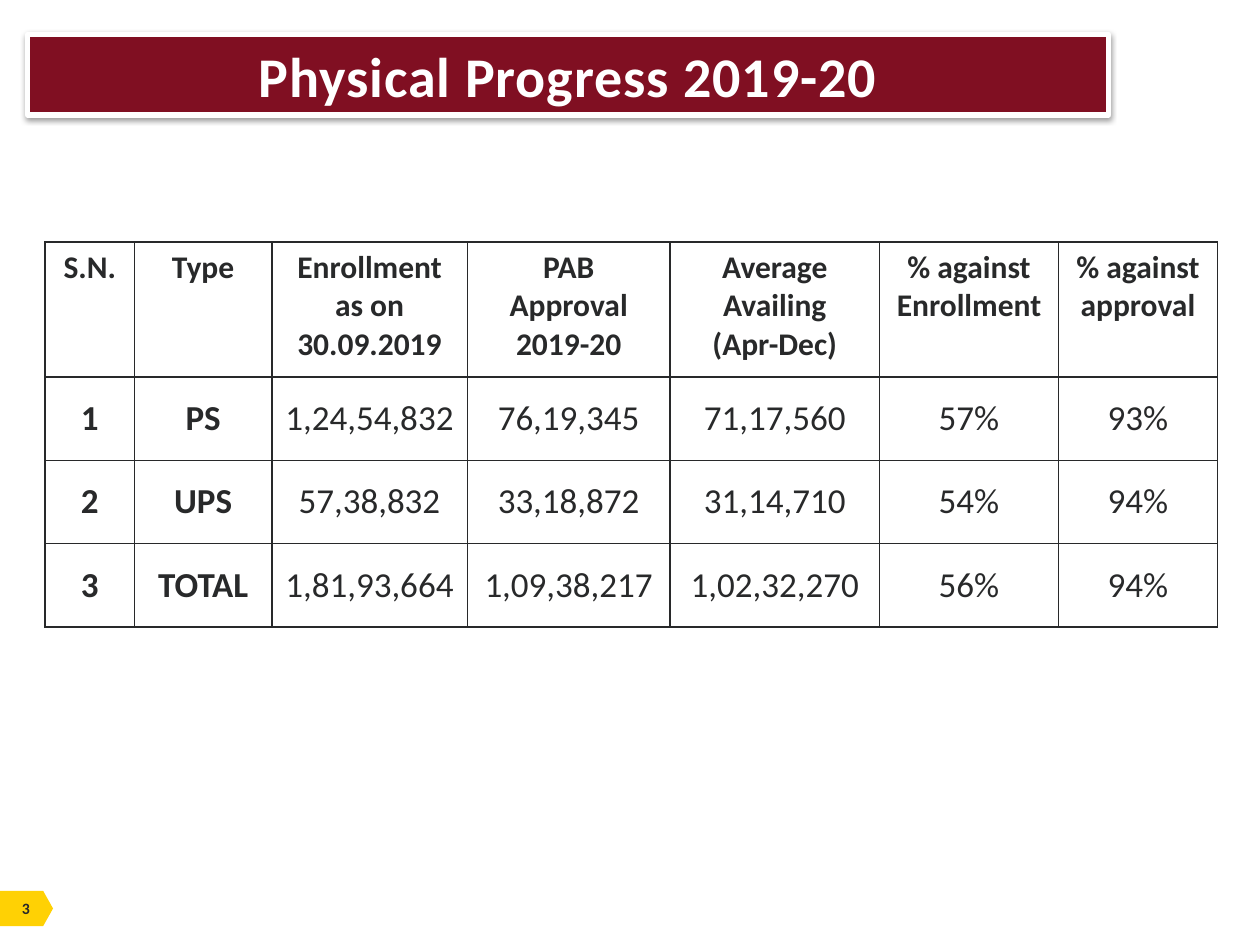
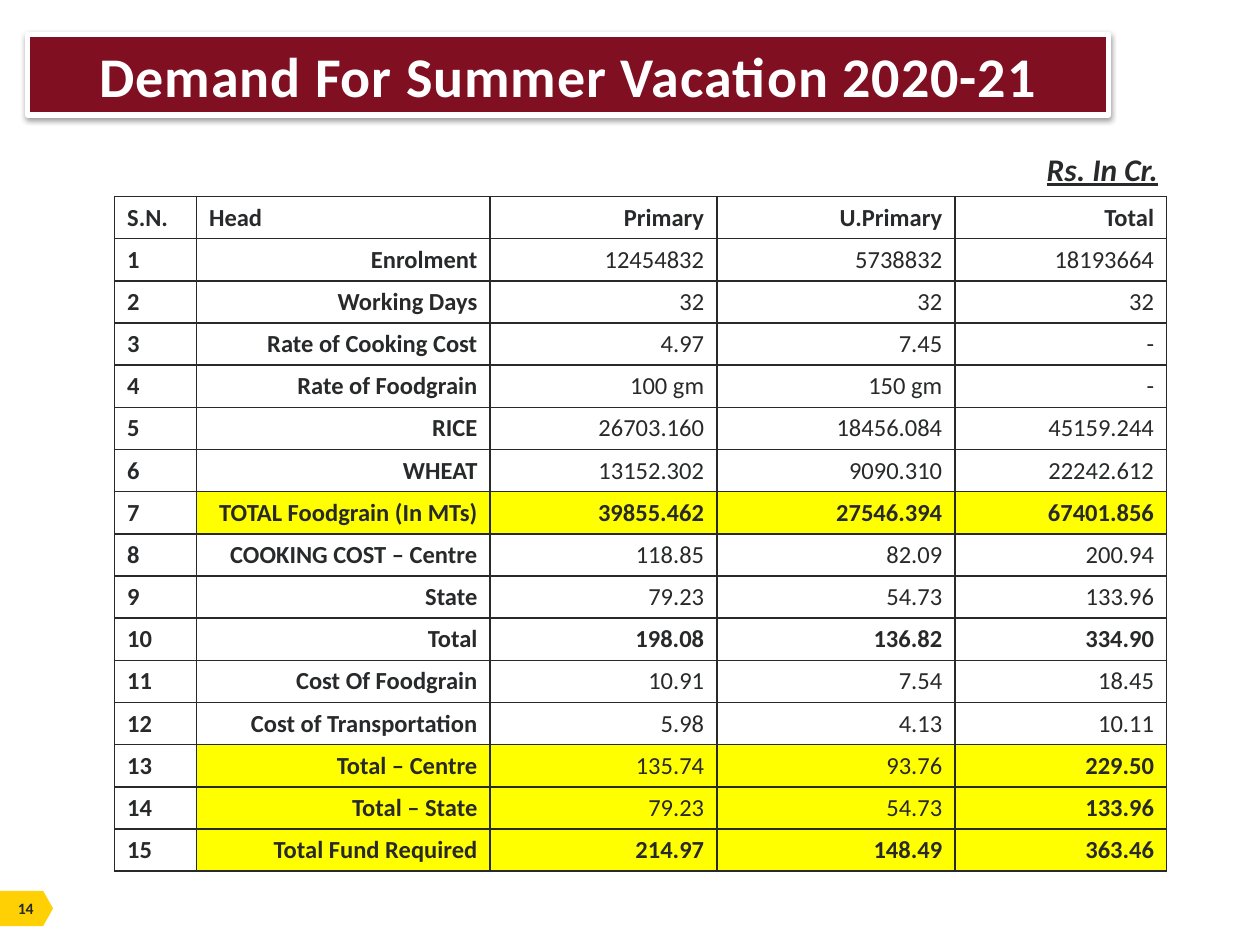
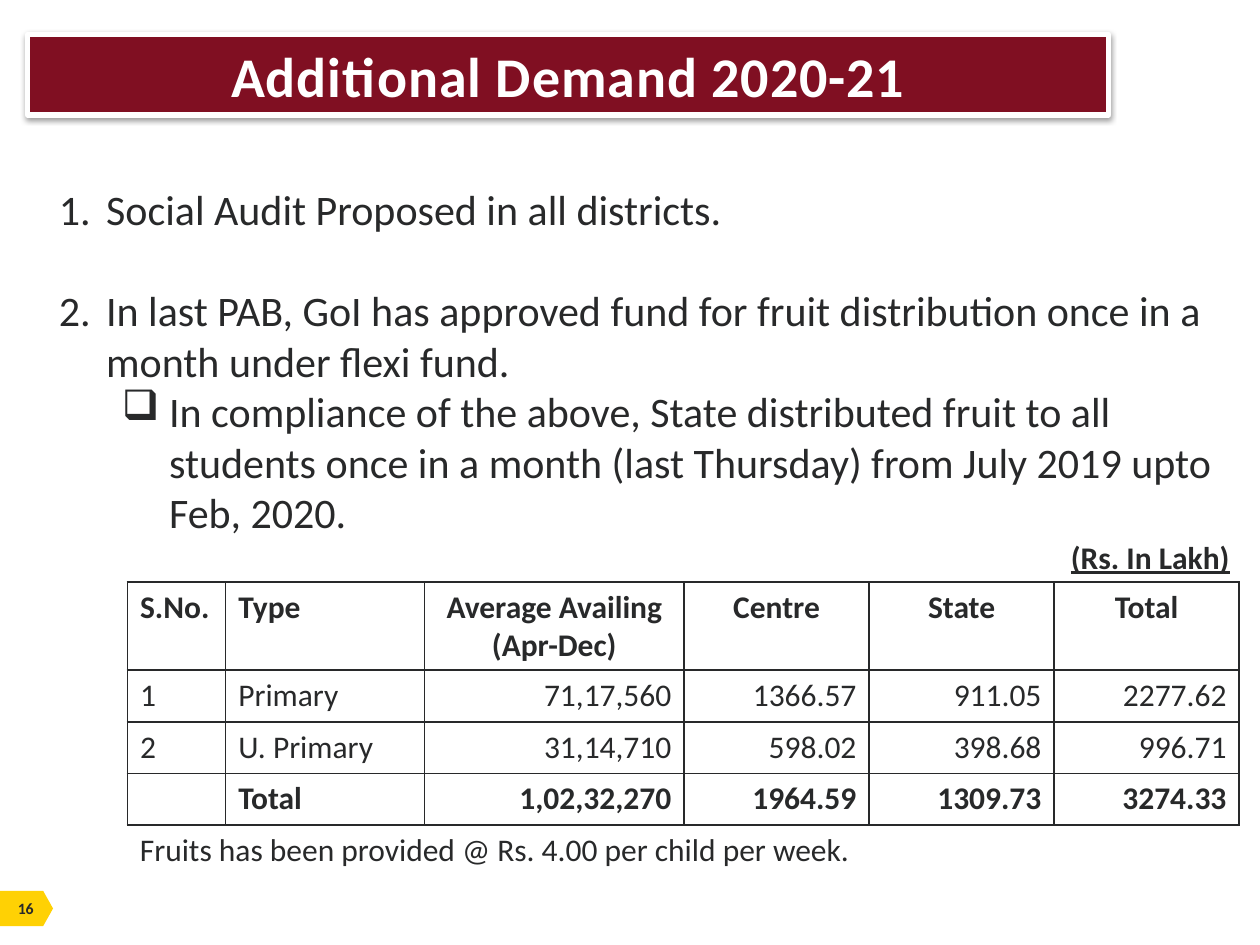
from pptx import Presentation
from pptx.dml.color import RGBColor
from pptx.enum.shapes import MSO_SHAPE
from pptx.enum.text import MSO_ANCHOR, PP_ALIGN
from pptx.oxml.ns import qn
from pptx.util import Cm, Pt
from lxml import etree

RECT, PLATE = MSO_SHAPE.RECTANGLE, MSO_SHAPE.PENTAGON
TOP, MIDDLE = MSO_ANCHOR.TOP, MSO_ANCHOR.MIDDLE
ALIGN = {"l": PP_ALIGN.LEFT, "c": PP_ALIGN.CENTER, "r": PP_ALIGN.RIGHT}
FONT = "Calibri"
HEX = {"ink": "28292A", "band": "800F22", "white": "FFFFFF",
       "tag": "FFD104", "mark": "FFFF00", "shade": "000000"}
RGB = {name: RGBColor.from_string(code) for name, code in HEX.items()}


def style(para, size, bold=False, align="l", color="ink"):
    para.alignment = ALIGN[align]
    for run in para.runs:
        font = run.font
        font.name, font.size, font.bold = FONT, Pt(size), bold
        font.color.rgb = RGB[color]


def grid(slide, left, top, cols, tall, rows, size, head, body,
         strong, marked=(), anchor=TOP):
    """Draw a ruled table; tall holds the header and body row heights,
    head and body hold one alignment letter per column."""
    high = [tall[0]] + [tall[1]] * (len(rows) - 1)
    frame = slide.shapes.add_table(len(rows), len(cols), Cm(left), Cm(top),
                                   Cm(sum(cols)), Cm(sum(high)))
    table = frame.table
    table.first_row = table.horz_banding = False
    for c, wide in enumerate(cols):
        table.columns[c].width = Cm(wide)
    for r, row in enumerate(rows):
        table.rows[r].height = Cm(high[r])
        for c, text in enumerate(row):
            cell = table.cell(r, c)
            cell.text_frame.text = text
            cell.vertical_anchor = anchor if r else TOP
            for para in cell.text_frame.paragraphs:
                style(para, size if r else min(size, 18),
                      r == 0 or strong(r, c), (body if r else head)[c])
            # Cell borders, which must come before the fill
            props = cell._tc.get_or_add_tcPr()
            for side in ("a:lnL", "a:lnR", "a:lnT", "a:lnB"):
                line = etree.SubElement(props, qn(side), w=str(Pt(1)))
                fill = etree.SubElement(line, qn("a:solidFill"))
                etree.SubElement(fill, qn("a:srgbClr"), val=HEX["ink"])
            if r in marked and c:
                cell.fill.solid()
                cell.fill.fore_color.rgb = RGB["mark"]
            else:
                cell.fill.background()


deck = Presentation()
deck.slide_width, deck.slide_height = Cm(25.4), Cm(19.05)

# Page tag and title band on every slide
pages = []
for num, title in (("3", "Physical Progress 2019-20"),
                   ("14", "Demand For Summer Vacation 2020-21"),
                   ("16", "Additional Demand 2020-21")):
    slide = deck.slides.add_slide(deck.slide_layouts[6])
    pages.append(slide)

    tag = slide.shapes.add_shape(PLATE, 0, Cm(17.96), Cm(1.07), Cm(0.71))
    tag.adjustments[0] = 0.28
    tag.shadow.inherit = False
    tag.fill.solid()
    tag.fill.fore_color.rgb = RGB["tag"]
    tag.line.fill.background()

    box = slide.shapes.add_textbox(Cm(0.33), Cm(18.11), Cm(0.38), Cm(0.38))
    frame = box.text_frame
    frame.margin_left = frame.margin_right = 0
    frame.margin_top = frame.margin_bottom = 0
    frame.vertical_anchor = MIDDLE
    frame.word_wrap = False
    frame.text = num
    style(frame.paragraphs[0], 9, True, "c")

    band = slide.shapes.add_shape(RECT, Cm(0.56), Cm(0.69),
                                  Cm(21.79), Cm(1.63))
    band.fill.solid()
    band.fill.fore_color.rgb = RGB["band"]
    band.line.color.rgb = RGB["white"]
    band.line.width = Pt(3)
    band.shadow.inherit = False
    glow = etree.SubElement(
        band._element.spPr.find(qn("a:effectLst")), qn("a:outerShdw"),
        blurRad="40000", dist="20000", dir="5400000", rotWithShape="0")
    shade = etree.SubElement(glow, qn("a:srgbClr"), val=HEX["shade"])
    etree.SubElement(shade, qn("a:alpha"), val="38000")
    band.text_frame.text = title
    para = band.text_frame.paragraphs[0]
    style(para, 32, True, "c", "white")
    para.runs[0].font._element.set("spc", "50")

first, second, third = pages

# Physical progress table
rows = [
    ("S.N.", "Type", "Enrollment as on 30.09.2019",
     "PAB\vApproval\v2019-20", "Average\vAvailing\v(Apr-Dec)",
     "% against\vEnrollment", "% against\vapproval"),
    ("1", "PS", "1,24,54,832", "76,19,345", "71,17,560", "57%", "93%"),
    ("2", "UPS", "57,38,832", "33,18,872", "31,14,710", "54%", "94%"),
    ("3", "TOTAL", "1,81,93,664", "1,09,38,217", "1,02,32,270",
     "56%", "94%"),
]
grid(first, 0.91, 4.88, (1.8, 2.77, 3.94, 4.09, 4.22, 3.61, 3.2),
     (2.72, 1.68), rows, 20, "ccccccc", "ccccccc",
     lambda r, c: c < 2, anchor=MIDDLE)

# Summer vacation demand table
rows = [
    ("S.N.", "Head", "Primary", "U.Primary", "Total"),
    ("1", "Enrolment", "12454832", "5738832", "18193664"),
    ("2", "Working Days", "32", "32", "32"),
    ("3", "Rate of Cooking Cost", "4.97", "7.45", "-"),
    ("4", "Rate of Foodgrain", "100 gm", "150 gm", "-"),
    ("5", "RICE", "26703.160", "18456.084", "45159.244"),
    ("6", "WHEAT", "13152.302", "9090.310", "22242.612"),
    ("7", "TOTAL Foodgrain (In MTs)", "39855.462", "27546.394",
     "67401.856"),
    ("8", "COOKING COST – Centre", "118.85", "82.09", "200.94"),
    ("9", "State", "79.23", "54.73", "133.96"),
    ("10", "Total", "198.08", "136.82", "334.90"),
    ("11", "Cost Of Foodgrain", "10.91", "7.54", "18.45"),
    ("12", "Cost of Transportation", "5.98", "4.13", "10.11"),
    ("13", "Total – Centre", "135.74", "93.76", "229.50"),
    ("14", "Total – State", "79.23", "54.73", "133.96"),
    ("15", "Total Fund Required", "214.97", "148.49", "363.46"),
]
grid(second, 2.31, 3.96, (1.65, 5.92, 4.57, 4.8, 4.27), (0.85, 0.85),
     rows, 14, "llrrr", "lrrrr",
     lambda r, c: c < 2 or r in (7, 10, 15) or (r in (13, 14) and c == 4),
     marked=(7, 13, 14, 15))

# Additional demand points
box = third.shapes.add_textbox(Cm(0.94), Cm(3.58), Cm(24.05), Cm(7.44))
frame = box.text_frame
frame.word_wrap = True
points = (
    ("Social Audit Proposed in all districts.", 0, 0),
    ("In last PAB, GoI has approved fund for fruit distribution once in a "
     "month under flexi fund.", 0, 29),
    ("In compliance of the above, State distributed fruit to all students "
     "once in a month (last Thursday) from July 2019 upto Feb, 2020.", 1, 0),
)
frame.text = "\n".join(point[0] for point in points)
for para, (text, level, gap) in zip(frame.paragraphs, points):
    props = para._p.get_or_add_pPr()
    props.set("marL", str(Cm(0.95 + 1.27 * level)))
    props.set("indent", str(Cm(-0.95)))
    if level:
        etree.SubElement(props, qn("a:buChar"), char="❑")
    else:
        etree.SubElement(props, qn("a:buAutoNum"), type="arabicPeriod")
    para.level = level
    if gap:
        para.space_before = Pt(gap)
    style(para, 24)

# Additional demand table
rows = [
    ("S.No.", "Type", "Average Availing (Apr-Dec)",
     "Centre", "State", "Total"),
    ("1", "Primary", "71,17,560", "1366.57", "911.05", "2277.62"),
    ("2", "U. Primary", "31,14,710", "598.02", "398.68", "996.71"),
    ("", "Total", "1,02,32,270", "1964.59", "1309.73", "3274.33"),
]
grid(third, 2.57, 11.73, (1.98, 4.01, 5.23, 3.73, 3.73, 3.73),
     (1.78, 1.04), rows, 18, "llcccc", "llrrrr", lambda r, c: r == 3)

# Unit labels and footnote beside the tables
for slide, left, top, wide, text, bold, slant in (
        (second, 20.85, 2.9, 2.77, "Rs. In Cr.", True, True),
        (third, 2.57, 16.61, 14.99,
         "Fruits has been provided @ Rs. 4.00 per child per week.",
         False, False),
        (third, 21.34, 10.72, 3.73, "(Rs. In Lakh)", True, False)):
    box = slide.shapes.add_textbox(Cm(left), Cm(top), Cm(wide), Cm(1.02))
    box.text_frame.word_wrap = False
    box.text_frame.text = text
    para = box.text_frame.paragraphs[0]
    style(para, 18, bold)
    para.runs[0].font.italic = slant
    para.runs[0].font.underline = bold

deck.save("out.pptx")
